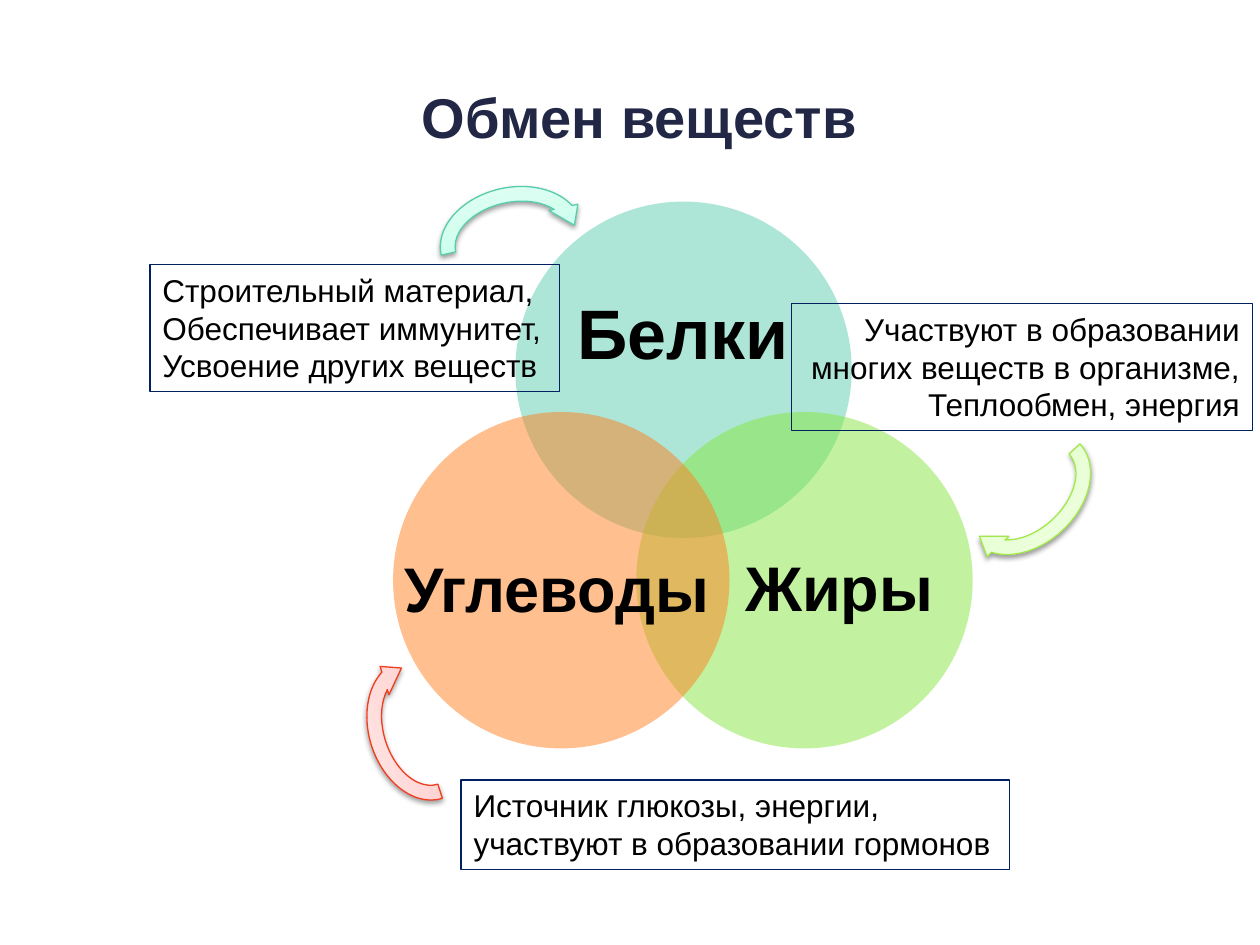
from copy import deepcopy

from lxml import etree
from pptx import Presentation
from pptx.dml.color import RGBColor
from pptx.enum.shapes import MSO_SHAPE
from pptx.enum.text import MSO_ANCHOR, MSO_AUTO_SIZE, PP_ALIGN
from pptx.oxml.ns import qn
from pptx.util import Inches, Pt

OVAL, RECTANGLE, ARROW = MSO_SHAPE.OVAL, MSO_SHAPE.RECTANGLE, MSO_SHAPE.CIRCULAR_ARROW
LEFT, CENTER, RIGHT = PP_ALIGN.LEFT, PP_ALIGN.CENTER, PP_ALIGN.RIGHT
TOP, MIDDLE = MSO_ANCHOR.TOP, MSO_ANCHOR.MIDDLE
GROW = MSO_AUTO_SIZE.SHAPE_TO_FIT_TEXT

FONT = "Arial"
BLACK, NAVY, TITLE_COLOR = "000000", "002060", "212745"
CIRCLE_SIZE = 2.67


def color(hex_text):
    return RGBColor.from_string(hex_text)


def write_text(shape, text, size, text_color=BLACK, bold=False, align=LEFT,
               anchor=TOP, wrap=True):
    frame = shape.text_frame
    frame.text = text
    frame.word_wrap = wrap
    frame.vertical_anchor = anchor
    for para in frame.paragraphs:
        para.alignment = align
        for span in para.runs:
            span.font.name = FONT
            span.font.size = Pt(size)
            span.font.bold = bold
            span.font.color.rgb = color(text_color)
    return frame


def add_label(page, area, text, size, **options):
    box = page.shapes.add_textbox(*map(Inches, area))
    return write_text(box, text, size, bold=True, **options)


def add_circle_label(page, area, text, size):
    frame = add_label(page, area, text, size, align=CENTER, anchor=MIDDLE)
    frame.margin_left = frame.margin_right = 0
    frame.margin_top = frame.margin_bottom = 0
    frame.paragraphs[0].line_spacing = 0.9


def add_preset(page, kind, area):
    shape = page.shapes.add_shape(kind, *map(Inches, area))
    shape.shadow.inherit = False
    return shape


def add_circle(page, left, top, fill):
    circle = add_preset(page, OVAL, (left, top, CIRCLE_SIZE, CIRCLE_SIZE))
    circle.fill.solid()
    circle.fill.fore_color.rgb = color(fill)
    circle.line.fill.background()
    # Half transparent, so that the overlaps show
    fill_color = circle._element.spPr.find(qn("a:solidFill"))[0]
    etree.SubElement(fill_color, qn("a:alpha"), val="50000")


def add_note(page, area, text, align=LEFT, wrap=False):
    note = add_preset(page, RECTANGLE, area)
    note.fill.background()
    note.line.color.rgb = color(NAVY)
    note.line.width = Pt(0.75)
    frame = write_text(note, text, 18, align=align, wrap=wrap)
    frame.auto_size = GROW


def add_arrow(page, left, top, rotation, line, stops):
    arrow = add_preset(page, ARROW, (left, top, 1.26, 0.94))
    arrow.rotation = rotation
    arrow.line.color.rgb = color(line)
    arrow.line.width = Pt(0.75)

    # Gradient of three stops, rising from the bottom
    arrow.fill.gradient()
    arrow.fill.gradient_angle = 90
    properties = arrow._element.spPr
    stop_list = properties.find(qn("a:gradFill")).find(qn("a:gsLst"))
    stop_list.append(deepcopy(stop_list[-1]))
    for stop, position, hex_text in zip(arrow.fill.gradient_stops, (0, 0.35, 1), stops):
        stop.position = position
        stop.color.rgb = color(hex_text)

    # Soft shadow below
    effects = properties.find(qn("a:effectLst"))
    shadow = etree.SubElement(effects, qn("a:outerShdw"), blurRad=str(Pt(3.1)),
                              dist=str(Pt(1.6)), dir="5400000", rotWithShape="0")
    shade = etree.SubElement(shadow, qn("a:srgbClr"), val=BLACK)
    etree.SubElement(shade, qn("a:alpha"), val="38000")


def main():
    deck = Presentation()
    deck.slide_width, deck.slide_height = Inches(10), Inches(7.5)
    page = deck.slides.add_slide(deck.slide_layouts[6])

    # Title
    add_label(page, (0.5, 0.3, 9.15, 1.25), "Обмен веществ", 32,
              text_color=TITLE_COLOR, align=CENTER, anchor=MIDDLE)

    # Three overlapping circles with their names
    add_circle(page, 4.09, 1.6, "5DCEAF")
    add_circle_label(page, (4.44, 2.07, 1.96, 1.2), "Белки", 40)
    add_circle(page, 5.05, 3.27, "86E640")
    add_circle_label(page, (5.86, 3.96, 1.6, 1.47), "Жиры", 36)
    add_circle(page, 3.12, 3.27, "FF8021")
    add_label(page, (3.11, 4.31, 2.65, 0.71), "Углеводы", 36, wrap=False)

    # Proteins
    add_arrow(page, 3.43, 1.43, 347.4, "58CCAC", ("AEFFE3", "C5FFEA", "E9FFF7"))
    add_note(page, (1.19, 2.1, 3.25, 1.01),
             "Строительный материал,\nОбеспечивает иммунитет,\nУсвоение других веществ")

    # Fats
    add_note(page, (6.28, 2.41, 3.66, 1.01),
             "Участвуют в образовании\vмногих веществ в организме,\nТеплообмен, энергия",
             align=RIGHT, wrap=True)
    add_arrow(page, 7.52, 3.44, 137.4, "A4E94C", ("D8FFB8", "E3FFCD", "F4FFEC"))

    # Carbohydrates
    add_note(page, (3.66, 6.19, 4.35, 0.71),
             "Источник глюкозы, энергии,\nучаствуют в образовании гормонов")
    add_arrow(page, 2.71, 5.32, 252.6, "F13C1E", ("FFBAB7", "FFCECC", "FFEDEC"))

    deck.save("out.pptx")


if __name__ == "__main__":
    main()
